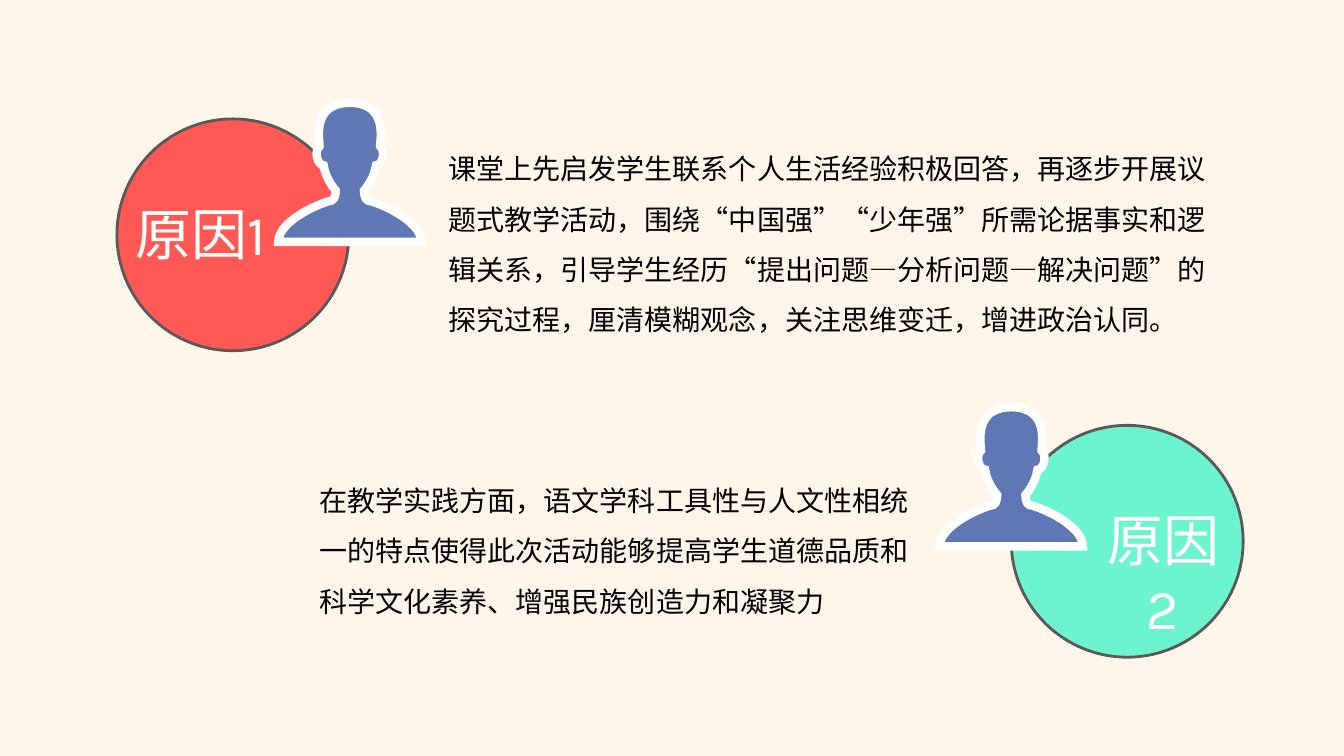
from lxml import etree
from pptx import Presentation
from pptx import util as u
from pptx.dml.color import RGBColor
from pptx.enum import lang, shapes, text
from pptx.oxml.ns import qn

COLORS = {
    "background": "FFF5E9", "red": "FF5855", "mint": "6BF4CD", "ring": "595959",
    "person": "6077B6", "outline": "FFFEFE", "label": "FFFFFF", "body": "000000",
}
BODY_FONT, LABEL_FONT = "Noto Sans CJK SC", "Karla"

# Right half of the person, from crown to base: each row is a Bezier curve
# (two handles and an end) as distances from the axis and the top, in inches
CROWN = (0, 0)
HALF_CURVES = [
    [(0.38, 0), (0.30, 0.37), (0.30, 0.43)],
    [(0.36, 0.48), (0.32, 0.62), (0.26, 0.62)],
    [(0.24, 0.76), (0.14, 0.87), (0.14, 0.87)],
    [(0.14, 0.87), (0.14, 0.96), (0.18, 0.97)],
    [(0.29, 0.99), (0.71, 1.17), (0.71, 1.38)],
]
HALF_WIDTH = 0.71


def color(name):
    return RGBColor.from_string(COLORS[name])


def paint(shape, fill, line, width):
    shape.fill.solid()
    shape.fill.fore_color.rgb = color(fill)
    shape.line.color.rgb = color(line)
    shape.line.width = u.Pt(width)
    shape.shadow.inherit = False


def person_segments():
    """Right half, base line, then the right half mirrored back to the crown."""
    right = [CROWN] + [point for curve in HALF_CURVES for point in curve]
    left = [(-x, y) for x, y in reversed(right)]
    mirrored = [left[i:i + 3] for i in range(1, len(left), 3)]
    return HALF_CURVES + [[left[0]]] + mirrored


def add_person(parent, axis, top):
    segments = person_segments()
    ends = [(u.Inches(axis + x), u.Inches(top + y))
            for x, y in (segment[-1] for segment in segments)]
    builder = parent.build_freeform(u.Inches(axis), u.Inches(top))
    builder.add_line_segments(ends, close=True)
    person = builder.convert_to_shape()
    paint(person, "person", "outline", 6)

    # Bend the straight sides into curves
    sides = list(person._element.iter(qn("a:lnTo")))
    for side, segment in zip(sides, segments):
        if len(segment) == 3:
            bend = etree.Element(qn("a:cubicBezTo"))
            for x, y in segment:
                etree.SubElement(bend, qn("a:pt"), x=str(u.Inches(HALF_WIDTH + x)),
                                 y=str(u.Inches(y)))
            side.getparent().replace(side, bend)

    # Sharp corners at the base
    etree.SubElement(person.line._get_or_add_ln(), qn("a:miter"), lim="800000")


def add_text(parent, place, words, size, font, ink, align=None, spacing=None):
    box = parent.add_textbox(*map(u.Inches, place))
    frame = box.text_frame
    frame.word_wrap = True
    frame.auto_size = text.MSO_AUTO_SIZE.SHAPE_TO_FIT_TEXT
    para = frame.paragraphs[0]
    para.alignment = align
    para.line_spacing = spacing
    span = para.add_run()
    span.text = words
    span.font.size = u.Pt(size)
    span.font.name = font
    span.font.color.rgb = color(ink)
    span.font.language_id = lang.MSO_LANGUAGE_ID.SIMPLIFIED_CHINESE
    if font == BODY_FONT:
        etree.SubElement(span.font._element, qn("a:ea"), typeface=font)


def add_badge(page, left, top, fill, person_axis, person_top, label_left, words):
    group = page.shapes.add_group_shape().shapes
    circle = group.add_shape(shapes.MSO_SHAPE.OVAL, u.Inches(left), u.Inches(top),
                             u.Inches(2.3), u.Inches(2.3))
    paint(circle, fill, "ring", 2)
    add_person(group, person_axis, person_top)
    add_text(group, (label_left, top + 0.75, 1.51, 1.45), words, 40, LABEL_FONT,
             "label", align=text.PP_ALIGN.CENTER)


def add_body(page, place, words):
    add_text(page.shapes, place, words, 20, BODY_FONT, "body", spacing=1.5)


def main():
    deck = Presentation()
    deck.slide_width, deck.slide_height = u.Inches(13.33), u.Inches(7.5)
    page = deck.slides.add_slide(deck.slide_layouts[6])
    page.background.fill.solid()
    page.background.fill.fore_color.rgb = color("background")

    # Second reason: text, then badge on the right
    add_body(page, (3.07, 4.58, 6.24, 1.56),
             "在教学实践方面，语文学科工具性与人文性相统一的特点使得此次活动"
             "能够提高学生道德品质和科学文化素养、增强民族创造力和凝聚力")
    add_badge(page, 10.03, 4.22, "mint", 10.03, 4.04, 10.78, "原因2")

    # First reason: badge on the left, then text
    add_badge(page, 1.16, 1.18, "red", 3.47, 1.02, 1.24, "原因1")
    add_body(page, (4.35, 1.29, 7.8, 2.07),
             "课堂上先启发学生联系个人生活经验积极回答，再逐步开展议题式教学活动，"
             "围绕“中国强”“少年强”所需论据事实和逻辑关系，"
             "引导学生经历“提出问题—分析问题—解决问题”的探究过程，"
             "厘清模糊观念，关注思维变迁，增进政治认同。")

    deck.save("out.pptx")


if __name__ == "__main__":
    main()
